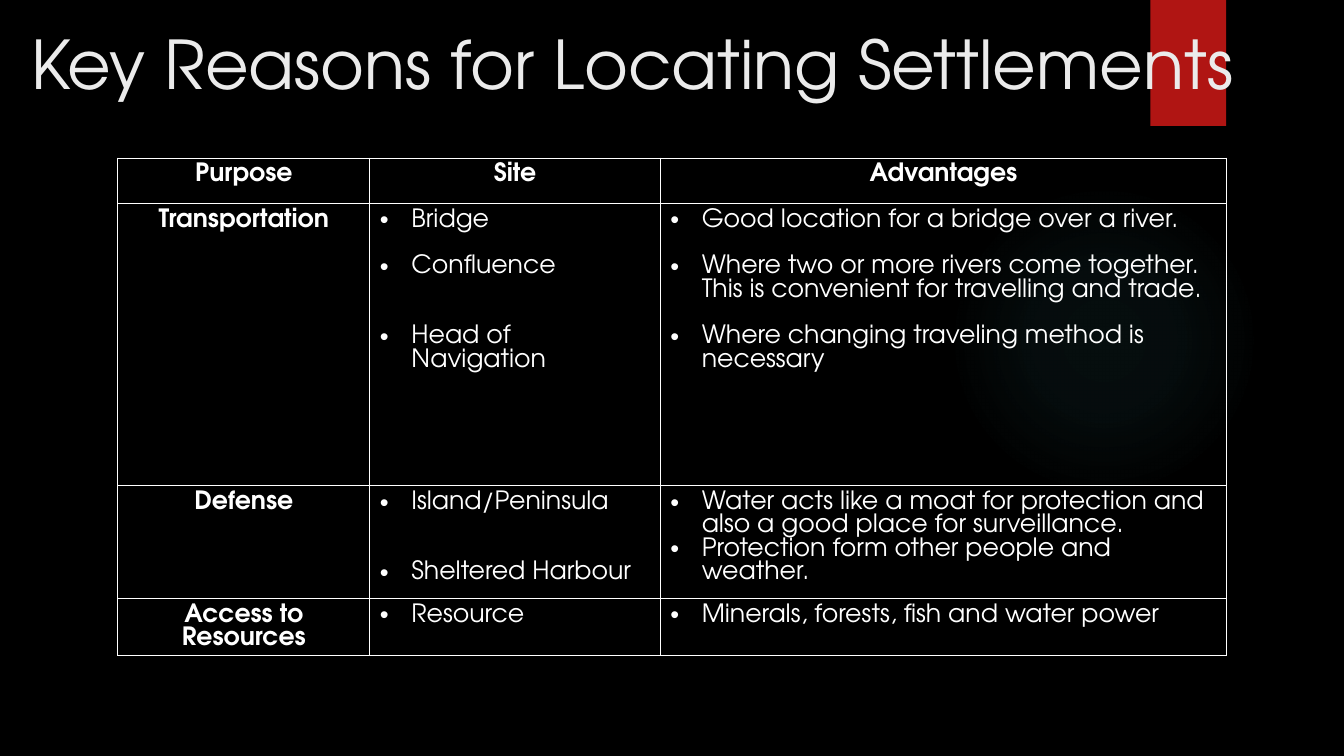
"""Build a slide with a table of reasons for locating settlements."""
from lxml import etree
from pptx import Presentation
from pptx.dml.color import RGBColor
from pptx.enum.shapes import MSO_SHAPE
from pptx.enum.text import MSO_ANCHOR, MSO_AUTO_SIZE, PP_ALIGN
from pptx.oxml import parse_xml
from pptx.oxml.ns import nsdecls, qn
from pptx.util import Pt

CENTER, LEFT = PP_ALIGN.CENTER, PP_ALIGN.LEFT
TOP, NO_FIT = MSO_ANCHOR.TOP, MSO_AUTO_SIZE.NONE
OVAL, RECTANGLE = MSO_SHAPE.OVAL, MSO_SHAPE.RECTANGLE

TITLE = "Key Reasons for Locating Settlements"
HEADERS = ["Purpose", "Site", "Advantages"]
# Each bullet is (number of lines of space before it, text).
REASONS = [
    ("Transportation",
     [(0, "Bridge"), (1, "Confluence"), (2, "Head of Navigation")],
     [(0, "Good location for a bridge over a river."),
      (1, "Where two or more rivers come together. "
          "This is convenient for travelling and trade."),
      (1, "Where changing traveling method is necessary")]),
    ("Defense",
     [(0, "Island/Peninsula"), (2, "Sheltered Harbour")],
     [(0, "Water acts like a moat for protection and "
          "also a good place for surveillance."),
      (0, "Protection form other people and weather.")]),
    ("Access to Resources",
     [(0, "Resource")],
     [(0, "Minerals, forests, fish and water power")]),
]
FONT = "TeX Gyre Adventor"
BLACK, WHITE, TITLE_COLOR = "000000", "FFFFFF", "EBEBEB"
RED, TEAL = "B01513", "50B9C1"
GLOW_STOPS = [(0, 7), (36, 6), (69, 0)]
COLUMN_WIDTHS = [180, 207.4, 404.6]
ROW_HEIGHTS = [32.4, 201.6, 80.6, 40.8]
TABLE_LEFT, TABLE_TOP = 84.2, 113
TEXT_SIZE, LINE_PITCH, INDENT = 18, 16.7, 22.5


def color(hex_string):
    return RGBColor.from_string(hex_string)


def format_runs(paragraph, size, hex_string, bold=False):
    for run in paragraph.runs:
        run.font.name = FONT
        run.font.size = Pt(size)
        run.font.bold = bold
        run.font.color.rgb = color(hex_string)


def add_backdrop(slide, kind, left, top, width, height, hex_string):
    shape = slide.shapes.add_shape(kind, Pt(left), Pt(top), Pt(width), Pt(height))
    shape.shadow.inherit = False
    shape.line.fill.background()
    shape.fill.solid()
    shape.fill.fore_color.rgb = color(hex_string)
    slide.shapes.title._element.addprevious(shape._element)
    return shape


def set_glow(shape):
    stops = "".join(
        f'<a:gs pos="{position * 1000}"><a:srgbClr val="{TEAL}">'
        f'<a:alpha val="{alpha * 1000}"/></a:srgbClr></a:gs>'
        for position, alpha in GLOW_STOPS)
    gradient = parse_xml(
        f'<a:gradFill {nsdecls("a")}><a:gsLst>{stops}</a:gsLst><a:path path="circle">'
        '<a:fillToRect l="50000" t="50000" r="50000" b="50000"/></a:path></a:gradFill>')
    properties = shape._element.spPr
    properties.replace(properties.find(qn("a:solidFill")), gradient)


def set_borders(cell):
    properties = cell._tc.get_or_add_tcPr()
    for index, side in enumerate(("lnL", "lnR", "lnT", "lnB")):
        properties.insert(index, parse_xml(
            f'<a:{side} {nsdecls("a")} w="{Pt(1)}"><a:solidFill>'
            f'<a:srgbClr val="{WHITE}"/></a:solidFill></a:{side}>'))


def add_bullet(paragraph):
    properties = paragraph._p.get_or_add_pPr()
    properties.set("marL", str(Pt(INDENT)))
    properties.set("indent", str(-Pt(INDENT)))
    etree.SubElement(properties, qn("a:buFont"), typeface="Arial")
    etree.SubElement(properties, qn("a:buChar"), char="•")


def fill_cell(cell, content):
    cell.fill.background()
    set_borders(cell)
    is_label = isinstance(content, str)
    items = [(0, content)] if is_label else content
    frame = cell.text_frame
    frame.text = "\n".join(text for _, text in items)
    for paragraph, (gap, _) in zip(frame.paragraphs, items):
        if not is_label:
            add_bullet(paragraph)
        paragraph.alignment = CENTER if is_label else LEFT
        paragraph.line_spacing = Pt(LINE_PITCH)
        paragraph.space_before = Pt(gap * LINE_PITCH)
        format_runs(paragraph, TEXT_SIZE, WHITE, is_label)


def add_title(slide):
    title = slide.shapes.title
    title.left, title.top, title.width, title.height = Pt(15), Pt(12.2), Pt(919), Pt(127)
    frame = title.text_frame
    frame.text = TITLE
    frame.word_wrap = True
    frame.auto_size = NO_FIT
    frame.vertical_anchor = TOP
    frame.paragraphs[0].alignment = LEFT
    format_runs(frame.paragraphs[0], 48, TITLE_COLOR)


def add_reasons_table(slide):
    rows = [HEADERS, *REASONS]
    table = slide.shapes.add_table(
        len(rows), len(HEADERS), Pt(TABLE_LEFT), Pt(TABLE_TOP),
        Pt(sum(COLUMN_WIDTHS)), Pt(sum(ROW_HEIGHTS))).table
    table.first_row = table.horz_banding = False
    for column, width in zip(table.columns, COLUMN_WIDTHS):
        column.width = Pt(width)
    for row, height, contents in zip(table.rows, ROW_HEIGHTS, rows):
        row.height = Pt(height)
        for cell, content in zip(row.cells, contents):
            fill_cell(cell, content)


def main():
    presentation = Presentation()
    presentation.slide_width, presentation.slide_height = Pt(960), Pt(540)
    slide = presentation.slides.add_slide(presentation.slide_layouts[5])
    slide.background.fill.solid()
    slide.background.fill.fore_color.rgb = color(BLACK)
    set_glow(add_backdrop(slide, OVAL, 677.5, 131.8, 221.8, 221.8, TEAL))
    add_backdrop(slide, RECTANGLE, 821.8, 0, 54, 90, RED)
    add_title(slide)
    add_reasons_table(slide)
    presentation.save("out.pptx")


if __name__ == "__main__":
    main()
